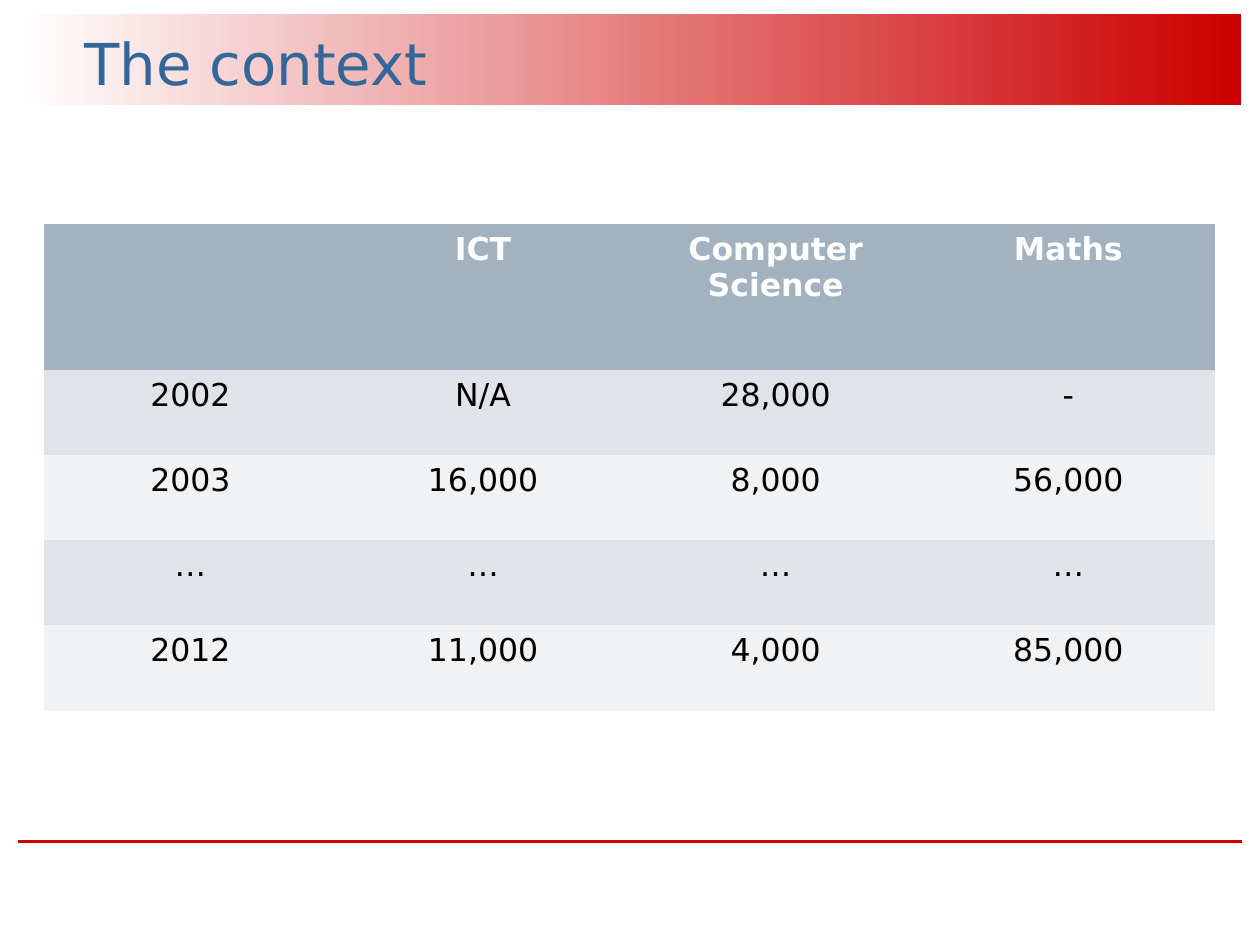
from dataclasses import dataclass
from lxml.etree import SubElement
from pptx import Presentation
from pptx.dml.color import RGBColor
from pptx.enum.shapes import MSO_CONNECTOR, MSO_SHAPE
from pptx.enum.text import MSO_ANCHOR, PP_ALIGN
from pptx.oxml.ns import qn
from pptx.util import Inches, Pt


@dataclass(frozen=True)
class Theme:
    font: str = "DejaVu Sans"
    red: str = "CC0000"
    white: str = "FFFFFF"
    black: str = "000000"
    blue: str = "336699"
    head: str = "A3B2C1"
    bands: tuple = ("E0E4E9", "F0F2F4")
    title: int = 33
    body: int = 18
    plain: str = "{2D5ABB26-0587-4C30-8999-92F81FD0307C}"


WIDE, HIGH = 10, 7.5
COLS, ROWS = 100, 75


def across(n):
    return Inches(n * WIDE / COLS)


def down(n):
    return Inches(n * HIGH / ROWS)


def color(code):
    return RGBColor.from_string(code)


def write(frame, text, *, font, size, ink, bold=False,
          align=PP_ALIGN.LEFT, lead=1.0):
    frame.word_wrap = True
    para = frame.paragraphs[0]
    para.alignment = align
    para.line_spacing = lead
    run = para.add_run()
    run.text = text
    run.font.name = font
    run.font.size = Pt(size)
    run.font.bold = bold
    run.font.color.rgb = color(ink)


class Deck:
    def __init__(self, theme):
        self.theme = theme
        self.show = Presentation()
        self.show.slide_width = Inches(WIDE)
        self.show.slide_height = Inches(HIGH)
        self.slide = self.show.slides.add_slide(self.show.slide_layouts[6])

    def rule(self, left, right, row):
        line = self.slide.shapes.add_connector(
            MSO_CONNECTOR.STRAIGHT,
            across(left), down(row), across(right), down(row))
        line.line.color.rgb = color(self.theme.red)
        line.line.width = Pt(1.5)
        SubElement(line._element.spPr, qn("a:effectLst"))

    def banner(self, left, top, width, height):
        bar = self.slide.shapes.add_shape(
            MSO_SHAPE.RECTANGLE,
            across(left), down(top), across(width), down(height))
        bar.shadow.inherit = False
        bar.line.fill.background()
        bar.fill.gradient()
        bar.fill.gradient_angle = 0
        tints = (self.theme.white, self.theme.red)
        for stop, tint, place in zip(bar.fill.gradient_stops, tints, (0, 1)):
            stop.color.rgb = color(tint)
            stop.position = place

    def title(self, text, left, top, width, height):
        frame = self.slide.shapes.add_textbox(
            across(left), down(top), across(width), down(height)).text_frame
        frame.vertical_anchor = MSO_ANCHOR.BOTTOM
        write(frame, text, font=self.theme.font, size=self.theme.title,
              ink=self.theme.blue)

    def table(self, data, left, top, width, first, rest):
        theme = self.theme
        height = first + rest * (len(data) - 1)
        grid = self.slide.shapes.add_table(
            len(data), len(data[0]),
            across(left), down(top), across(width), down(height)).table
        grid._tbl.tblPr.find(qn("a:tableStyleId")).text = theme.plain
        for y, line in enumerate(data):
            top_row = y == 0
            grid.rows[y].height = down(first if top_row else rest)
            fill = theme.head if top_row else theme.bands[(y - 1) % 2]
            for x, text in enumerate(line):
                cell = grid.cell(y, x)
                cell.fill.solid()
                cell.fill.fore_color.rgb = color(fill)
                cell.margin_top = Inches(0.06)
                write(cell.text_frame, text, font=theme.font,
                      size=theme.body, bold=top_row,
                      ink=theme.white if top_row else theme.black,
                      align=PP_ALIGN.CENTER, lead=0.98)


def main():
    deck = Deck(Theme())
    deck.rule(1.4, 98.6, 66.8)
    deck.banner(1.4, 1.1, 97.1, 7.2)
    deck.title("The context", 5.7, 1.8, 87.5, 6.4)
    deck.table([
        ("", "ICT", "Computer Science", "Maths"),
        ("2002", "N/A", "28,000", "-"),
        ("2003", "16,000", "8,000", "56,000"),
        ("…",) * 4,
        ("2012", "11,000", "4,000", "85,000"),
    ], 3.5, 17.8, 92.9, first=11.6, rest=6.75)
    deck.show.save("out.pptx")


if __name__ == "__main__":
    main()
